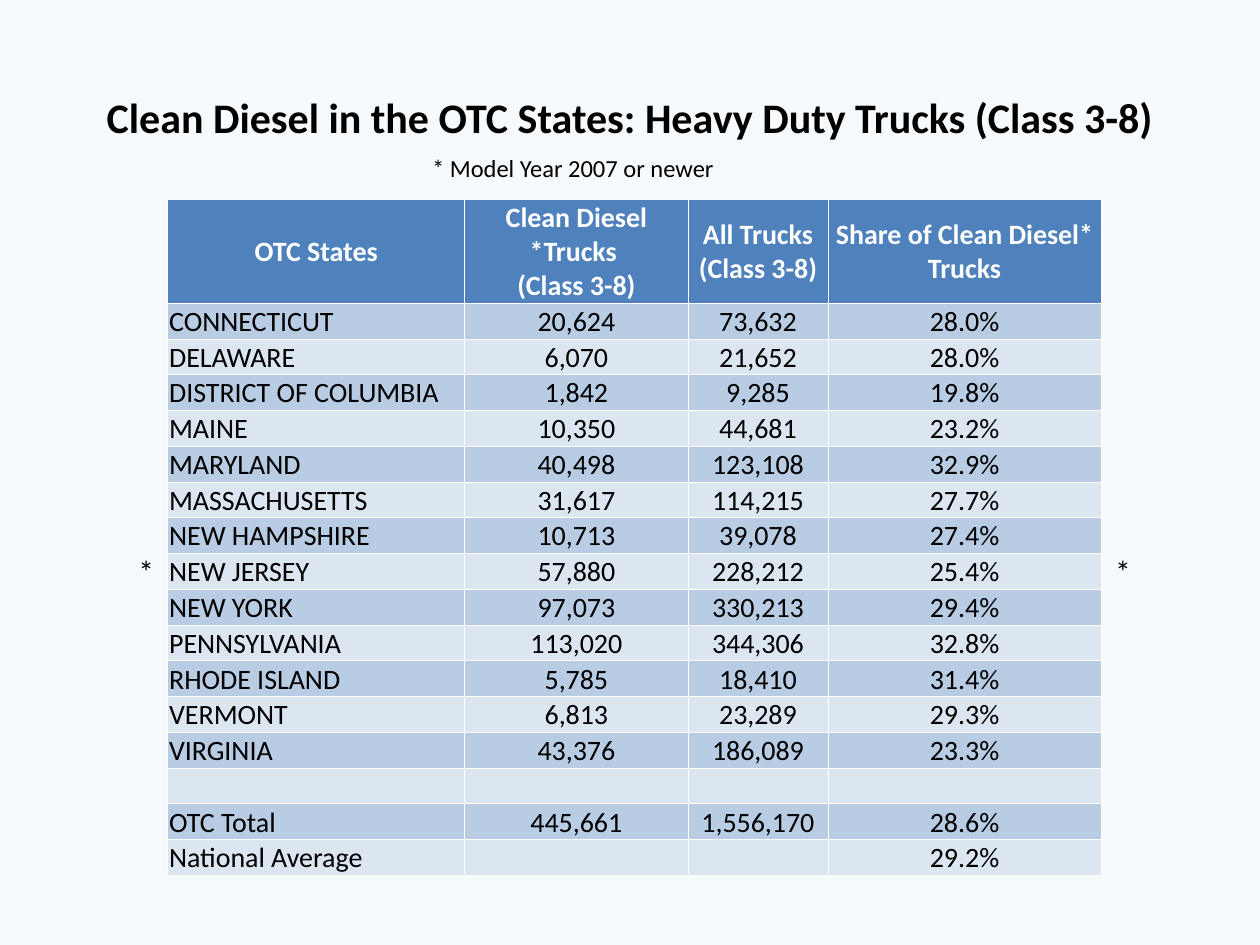
"""Build a slide with a table of clean diesel heavy duty trucks in the OTC states."""
from lxml.etree import SubElement
from pptx import Presentation
from pptx.dml.color import RGBColor
from pptx.enum.text import MSO_ANCHOR as Anchor, MSO_AUTO_SIZE as AutoSize, PP_ALIGN as Align
from pptx.oxml.ns import qn
from pptx.util import Cm, Pt

COLORS = {"background": "C6D9F1", "header": "4F81BD", "dark band": "B8CCE4",
          "light band": "DCE6F1", "white": "FFFFFF", "black": "000000"}
ROWS = [
    ("OTC States", "Clean Diesel *Trucks \v(Class 3-8)", "All Trucks\v(Class 3-8)",
     "Share of Clean Diesel* Trucks"),
    ("CONNECTICUT", "20,624", "73,632", "28.0%"),
    ("DELAWARE", "6,070", "21,652", "28.0%"),
    ("DISTRICT OF COLUMBIA", "1,842", "9,285", "19.8%"),
    ("MAINE", "10,350", "44,681", "23.2%"),
    ("MARYLAND", "40,498", "123,108", "32.9%"),
    ("MASSACHUSETTS", "31,617", "114,215", "27.7%"),
    ("NEW HAMPSHIRE", "10,713", "39,078", "27.4%"),
    ("NEW JERSEY", "57,880", "228,212", "25.4%"),
    ("NEW YORK", "97,073", "330,213", "29.4%"),
    ("PENNSYLVANIA", "113,020", "344,306", "32.8%"),
    ("RHODE ISLAND", "5,785", "18,410", "31.4%"),
    ("VERMONT", "6,813", "23,289", "29.3%"),
    ("VIRGINIA", "43,376", "186,089", "23.3%"),
    ("", "", "", ""),
    ("OTC Total", "445,661", "1,556,170", "28.6%"),
    ("National Average", "", "", "29.2%"),
]
COLUMN_WIDTHS = [5.99, 4.5, 2.82, 5.51]
TEXTS = [
    ("Clean Diesel in the OTC States: Heavy Duty Trucks (Class 3-8)",
     1.27, 0.76, 22.86, 3.18, 24, True, True),
    ("* Model Year 2007 or newer", 8.46, 2.97, 6.27, 0.86, 14, False, True),
    ("*", 2.54, 11, 0.84, 1.02, 18, False, False),
    ("*", 22.23, 11, 0.84, 1.02, 18, False, False),
]


def style_paragraph(para, size, color, bold, align):
    para.alignment = align
    para.font.name = "Calibri"
    para.font.size = Pt(size)
    para.font.bold = bold
    para.font.color.rgb = RGBColor.from_string(COLORS[color])


def add_borders(cell):
    properties = cell._tc.get_or_add_tcPr()
    for position, side in enumerate(("lnL", "lnR", "lnT", "lnB")):
        line = SubElement(properties, qn(f"a:{side}"), w=str(Pt(0.5)))
        fill = SubElement(line, qn("a:solidFill"))
        SubElement(fill, qn("a:srgbClr"), val=COLORS["white"])
        properties.insert(position, line)


deck = Presentation()
deck.slide_width, deck.slide_height = Cm(25.4), Cm(19.05)
page = deck.slides.add_slide(deck.slide_layouts[6])

page.background.fill.solid()
page.background.fill.fore_color.rgb = RGBColor.from_string(COLORS["background"])
background_color = page._element.find(".//" + qn("a:srgbClr"))
SubElement(background_color, qn("a:alpha"), val="13000")

frame = page.shapes.add_table(len(ROWS), len(COLUMN_WIDTHS), Cm(3.38), Cm(4.01), Cm(18.82), Cm(13.31))
table = frame.table
table.first_row = table.horz_banding = False
for column, width in zip(table.columns, COLUMN_WIDTHS):
    column.width = Cm(width)
for row_index, values in enumerate(ROWS):
    header = row_index == 0
    band = "header" if header else ("light band", "dark band")[row_index % 2]
    table.rows[row_index].height = Cm(1.96 if header else 0.66)
    for column_index, value in enumerate(values):
        cell = table.cell(row_index, column_index)
        cell.text = value
        cell.margin_left = cell.margin_right = cell.margin_top = Cm(0.03)
        cell.margin_bottom = 0
        cell.vertical_anchor = Anchor.MIDDLE if header else Anchor.BOTTOM
        cell.fill.solid()
        cell.fill.fore_color.rgb = RGBColor.from_string(COLORS[band])
        add_borders(cell)
        para = cell.text_frame.paragraphs[0]
        align = Align.CENTER if header or column_index else Align.LEFT
        style_paragraph(para, 16, "white" if header else "black", header, align)
        if not value:
            SubElement(para._p, qn("a:endParaRPr"), sz="1600")
frame.height = Cm(13.31)

for text, left, top, width, height, size, title, wrap in TEXTS:
    box = page.shapes.add_textbox(Cm(left), Cm(top), Cm(width), Cm(height))
    box.text_frame.word_wrap = wrap
    box.text_frame.auto_size = AutoSize.NONE if title else AutoSize.SHAPE_TO_FIT_TEXT
    box.text_frame.vertical_anchor = Anchor.MIDDLE if title else Anchor.TOP
    box.text_frame.text = text
    style_paragraph(box.text_frame.paragraphs[0], size, "black", title,
                    Align.CENTER if title else Align.LEFT)

deck.save("out.pptx")
